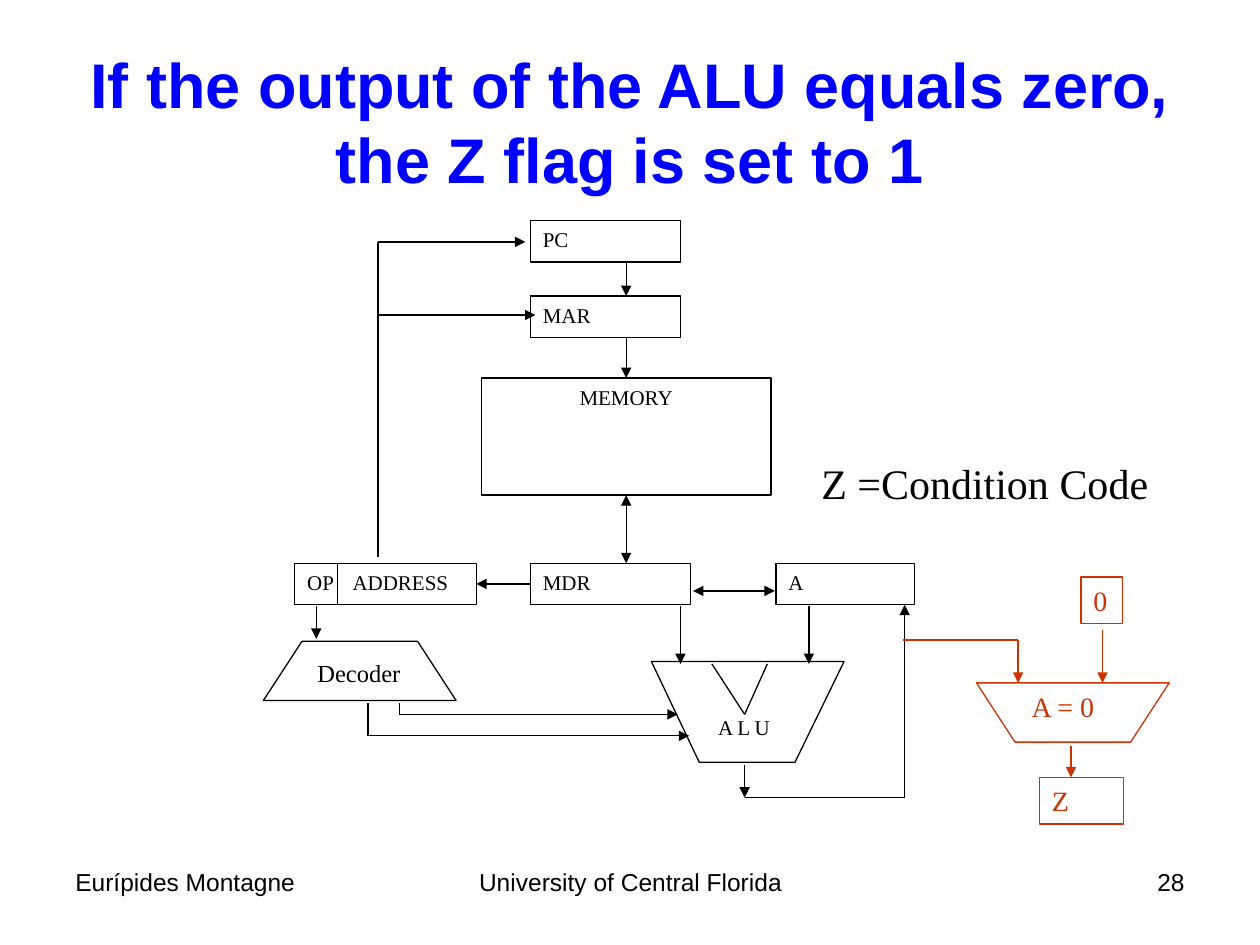
from lxml import etree
from pptx import Presentation
from pptx import util as u
from pptx.dml.color import RGBColor
from pptx.enum import shapes, text
from pptx.oxml.ns import qn

BLACK = RGBColor(0x00, 0x00, 0x00)
WHITE = RGBColor(0xFF, 0xFF, 0xFF)
BLUE = RGBColor(0x00, 0x00, 0xFF)
RED = RGBColor(0xCC, 0x33, 0x00)
SANS, SERIF = "Arial", "Times New Roman"
LEFT, CENTER, RIGHT = text.PP_ALIGN.LEFT, text.PP_ALIGN.CENTER, text.PP_ALIGN.RIGHT
TOP, MIDDLE = text.MSO_ANCHOR.TOP, text.MSO_ANCHOR.MIDDLE
SIDE_TOP, SIDE_LEFT, SIDE_BOTTOM, SIDE_RIGHT = range(4)


def write(shape, words, size=12, font=SERIF, color=BLACK, bold=False,
          align=LEFT, anchor=TOP, wrap=True, tab=None):
    frame = shape.text_frame
    frame.word_wrap = wrap
    frame.vertical_anchor = anchor
    paragraph = frame.paragraphs[0]
    paragraph.alignment = align
    if tab:
        stops = etree.SubElement(paragraph._p.get_or_add_pPr(), qn("a:tabLst"))
        etree.SubElement(stops, qn("a:tab"), pos=str(u.Inches(tab)), algn="l")
    run = paragraph.add_run()
    run.text = words
    run.font.size = u.Pt(size)
    run.font.name = font
    run.font.bold = bold
    run.font.color.rgb = color


class Diagram:
    """Draws elements on one slide in a common line style."""

    def __init__(self, slide, line_width=0.75):
        self.slide = slide
        self.line_width = u.Pt(line_width)

    def style(self, shape, color, fill):
        shape.shadow.inherit = False
        if fill is None:
            shape.fill.background()
        else:
            shape.fill.solid()
            shape.fill.fore_color.rgb = fill
        shape.line.color.rgb = color
        shape.line.width = self.line_width
        return shape

    def label(self, words, box, **format):
        write(self.slide.shapes.add_textbox(*map(u.Inches, box)), words, **format)

    def preset(self, kind, box, color=BLACK, fill=WHITE):
        shape = self.slide.shapes.add_shape(kind, *map(u.Inches, box))
        return self.style(shape, color, fill)

    def box(self, words, box, color=BLACK, fill=WHITE, **format):
        shape = self.preset(shapes.MSO_SHAPE.RECTANGLE, box, color, fill)
        write(shape, words, color=color, **format)
        return shape

    def outline(self, points, color=BLACK, fill=WHITE):
        corners = [(u.Inches(x), u.Inches(y)) for x, y in points]
        builder = self.slide.shapes.build_freeform(*corners[0])
        builder.add_line_segments(corners[1:], close=True)
        return self.style(builder.convert_to_shape(), color, fill)

    def line(self, start, end, color=BLACK, head=False, tail=False):
        connector = self.slide.shapes.add_connector(
            shapes.MSO_CONNECTOR.STRAIGHT, *map(u.Inches, (*start, *end)))
        connector.line.color.rgb = color
        connector.line.width = self.line_width
        line_xml = connector.line._get_or_add_ln()
        for tag, wanted in (("a:headEnd", head), ("a:tailEnd", tail)):
            if wanted:
                etree.SubElement(line_xml, qn(tag), type="triangle")
        etree.SubElement(connector._element.spPr, qn("a:effectLst"))
        return connector

    def route(self, *points, color=BLACK, arrow=True):
        """Join the points with lines, with an arrowhead at the last point."""
        last = len(points) - 2
        for index, (start, end) in enumerate(zip(points, points[1:])):
            self.line(start, end, color, tail=arrow and index == last)


def main():
    presentation = Presentation()
    presentation.slide_width = u.Inches(10)
    presentation.slide_height = u.Inches(7.5)
    slide = presentation.slides.add_slide(presentation.slide_layouts[6])
    diagram = Diagram(slide)

    # Title and footer
    diagram.label("If the output of the ALU equals zero, the Z flag is set to 1",
                  (0.5, 0.31, 9, 1.3), size=36, font=SANS, color=BLUE, bold=True,
                  align=CENTER, anchor=MIDDLE)
    for words, left, width, align in (
            ("Eurípides Montagne", 0.5, 2.33, LEFT),
            ("University of Central Florida", 3.42, 3.17, CENTER),
            ("28", 7.17, 2.33, RIGHT)):
        diagram.label(words, (left, 6.83, width, 0.52), size=14, font=SANS, align=align)

    # Registers and memory
    bus, height, row = 4.97, 0.33, 4.47
    diagram.box("PC", (4.21, 1.75, 1.19, height))
    diagram.box("MAR", (4.21, 2.35, 1.19, height))
    memory = diagram.box("MEMORY", (bus - 1.15, 3, 2.3, 0.93), align=CENTER)
    instruction = diagram.box("OP\tADDRESS", (2.34, row, 1.44, height), tab=0.36)
    mdr = diagram.box("MDR", (4.21, row, 1.27, height))
    diagram.box("A", (6.16, row, 1.1, height))
    diagram.line((2.68, row), (2.68, row + height))

    # Data paths between registers and memory
    diagram.route((bus, 2.08), (bus, 2.35))
    diagram.line((bus, 2.68), (bus, 3), tail=True).end_connect(memory, SIDE_TOP)
    diagram.line((bus, 3.93), (bus, row), head=True,
                 tail=True).begin_connect(memory, SIDE_BOTTOM)
    fetch = diagram.line((4.21, 4.64), (3.78, 4.64), tail=True)
    fetch.begin_connect(mdr, SIDE_LEFT)
    fetch.end_connect(instruction, SIDE_RIGHT)
    diagram.line((5.5, 4.69), (6.15, 4.69), head=True, tail=True)
    diagram.route((3, 4.42), (3, 1.92), (4.17, 1.92))
    diagram.route((3, 2.5), (4.25, 2.5))

    # ALU with its notch, inputs and result path
    alu = diagram.outline([(5.17, 5.25), (5.55, 6.05), (6.31, 6.05), (6.7, 5.25)])
    alu.text_frame.margin_top = u.Inches(0.29)
    alu.text_frame.margin_right = u.Inches(0.16)
    write(alu, "A L U", align=CENTER, anchor=MIDDLE)
    diagram.route((5.65, 5.27), (5.91, 5.67), (6.09, 5.27), arrow=False)
    for x in (5.4, 6.42):
        diagram.route((x, 4.81), (x, 5.27))
    diagram.route((5.91, 6.07), (5.91, 6.33))
    diagram.route((5.91, 6.33), (7.18, 6.33), (7.18, 4.8))

    # Decoder and its control lines
    decoder = diagram.preset(shapes.MSO_SHAPE.FLOWCHART_MANUAL_OPERATION,
                             (2.09, 5.09, 1.53, 0.47))
    decoder.rotation = 180
    diagram.label("Decoder", (2.42, 5.17, 0.92, 0.34), size=14)
    diagram.route((2.51, 4.81), (2.51, 5.07))
    for x, y, end in ((3.17, 5.67, 5.38), (2.92, 5.84, 5.47)):
        diagram.route((x, 5.58), (x, y), (end, y))

    # Zero test that sets the Z flag
    diagram.preset(shapes.MSO_SHAPE.FLOWCHART_MANUAL_OPERATION,
                   (7.75, 5.42, 1.53, 0.47), RED)
    diagram.label("A = 0", (8.09, 5.42, 0.7, 0.37), size=16, color=RED, wrap=False)
    for words, box in (("0", (8.58, 4.58, 0.33, 0.37)), ("Z", (8.25, 6.17, 0.67, 0.37))):
        diagram.box(words, box, RED, None, size=16)
    diagram.route((7.17, 5.08), (8.08, 5.08), (8.08, 5.42), color=RED)
    diagram.route((8.75, 5), (8.75, 5.42), color=RED)
    diagram.route((8.5, 5.92), (8.5, 6.17), color=RED)
    diagram.label("Z =Condition Code", (6.42, 3.58, 2.8, 0.5), size=24, wrap=False)

    presentation.save("out.pptx")


if __name__ == "__main__":
    main()
